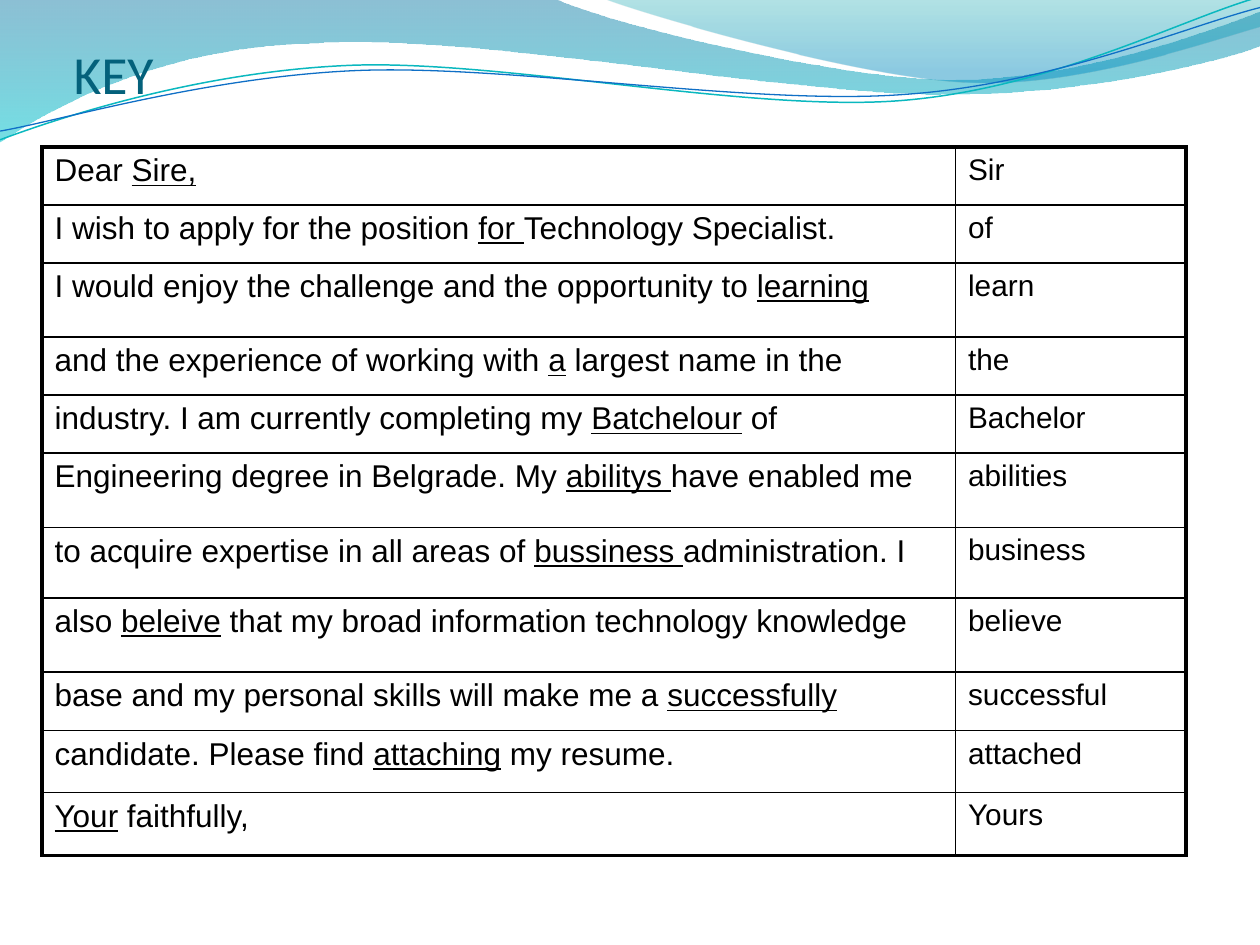
from lxml.etree import SubElement
from pptx import Presentation
from pptx.dml.color import RGBColor
from pptx.enum.text import MSO_ANCHOR, MSO_AUTO_SIZE, PP_ALIGN
from pptx.oxml.ns import qn
from pptx.util import Pt

COLORS = {
    "title": "04617B", "text": "000000", "border": "000000",
    "deep": "0074A1", "aqua": "00C6CF", "teal": "00A1A9", "sky": "008BBF",
    "teal line": "0AB8BF", "blue line": "0F6FC6",
}
THIN, THICK = 1, 2.25

WIDE_WAVE = [
    (0, 0), (317, -0.7), (342.7, 12.2, 478.1, 45.4, 545.8, 45.4),
    (614.2, 45.4, 689.8, 18.7, 720, 6.5), (720.7, 25.9),
    (707.8, 31.7, 626.4, 54.7, 537.1, 54), (447.8, 54, 275, 20.2, 185, 24.5),
    (92.9, 25.9, 33.1, 59.8, -0.7, 81.4), (0, 0),
]
RIGHT_WAVE = [
    (344.9, -0.7), (366.5, 7.9, 491, 44.6, 553.7, 46.8),
    (616.3, 49.7, 691.9, 23, 720, 15.1), (720, 0), (344.9, -0.7),
]
TEAL_LINE = [
    (0, 79.9), (34.6, 67, 113.8, 41, 199.4, 37.4),
    (284.4, 33.8, 427, 64.1, 513.4, 57.6),
    (599.8, 51.1, 675.4, 10.8, 718.6, -1.4),
]
BLUE_LINE = [
    (0, 74.9), (33.8, 69.1, 118.1, 43.9, 203.8, 40.3),
    (290.2, 36.7, 429.8, 60.5, 516.2, 54),
    (601.9, 48.2, 677.5, 15.1, 720, 4.3),
]

COLUMN_WIDTHS = (522, 131.8)
LETTER = [
    (33.1, "Dear ", "Sire,", " ", "Sir"),
    (33.1, "I wish to apply for the position ", "for ", "Technology Specialist.", "of"),
    (42.5, "I would enjoy the challenge and the opportunity to ", "learning", " ", "learn"),
    (33.1, "and the experience of working with ", "a", " largest name in the", "the"),
    (33.1, "industry. I am currently completing my ", "Batchelour", " of", "Bachelor"),
    (42.5, "Engineering degree in Belgrade. My ", "abilitys ", "have enabled me", "abilities"),
    (40.3, "to acquire expertise in all areas of ", "bussiness ", "administration. I", "business"),
    (42.5, "also ", "beleive", " that my broad information technology knowledge", "believe"),
    (33.5, "base and my personal skills will make me a ", "successfully", "", "successful"),
    (35.3, "candidate. Please find ", "attaching", " my resume.", "attached"),
    (36, "", "Your", " faithfully,", "Yours"),
]


def color(name):
    return RGBColor.from_string(COLORS[name])


def add_run(para, text, font, size, color_name, underline=False):
    span = para.add_run()
    span.text = text
    span.font.name = font
    span.font.size = Pt(size)
    span.font.color.rgb = color(color_name)
    if underline:
        span.font.underline = True


def bend_segments(shape, segments):
    steps = iter(list(shape._element.iter(qn("a:lnTo"))))
    for segment in segments:
        step = next(steps)
        if len(segment) == 6:
            curve = step.getparent().makeelement(qn("a:cubicBezTo"))
            step.addprevious(curve)
            for corner in (step, next(steps), next(steps)):
                curve.append(corner[0])
                corner.getparent().remove(corner)


def add_outline(page, segments, close):
    points = [(Pt(segment[i]), Pt(segment[i + 1]))
              for segment in segments for i in range(0, len(segment), 2)]
    builder = page.shapes.build_freeform(*points[0])
    builder.add_line_segments(points[1:], close=close)
    shape = builder.convert_to_shape()
    bend_segments(shape, segments[1:])
    shape.shadow.inherit = False
    return shape


def add_wave(page, segments, stops):
    wave = add_outline(page, segments, True)
    wave.line.fill.background()
    wave.fill.gradient()
    wave.fill.gradient_angle = 270
    for stop, (position, name, opacity) in zip(wave.fill.gradient_stops, stops):
        stop.position = position
        stop.color.rgb = color(name)
    paints = wave.fill._xPr.iter(qn("a:srgbClr"))
    for paint, (position, name, opacity) in zip(paints, stops):
        SubElement(paint, qn("a:alpha"), val=str(opacity * 1000))


def add_wave_line(page, segments, name, width):
    line = add_outline(page, segments, False)
    line.fill.background()
    line.line.color.rgb = color(name)
    line.line.width = Pt(width)


def format_title(page, text):
    title = page.shapes.title
    title.left, title.top, title.width, title.height = Pt(42), Pt(24), Pt(641.5), Pt(36)
    frame = title.text_frame
    frame.auto_size = MSO_AUTO_SIZE.NONE
    frame.word_wrap = True
    frame.vertical_anchor = MSO_ANCHOR.BOTTOM
    frame.margin_left = frame.margin_right = frame.margin_bottom = 0
    frame.margin_top = Pt(3.6)
    para = frame.paragraphs[0]
    para.alignment = PP_ALIGN.LEFT
    add_run(para, text, "Calibri", 30.6, "title")
    page.shapes._spTree.append(title._element)


def format_cell(cell, borders):
    properties = cell._tc.get_or_add_tcPr()
    for side, width in zip("LRTB", borders):
        edge = SubElement(properties, qn(f"a:ln{side}"), w=str(Pt(width)))
        fill = SubElement(edge, qn("a:solidFill"))
        SubElement(fill, qn("a:srgbClr"), val=COLORS["border"])
    cell.fill.background()


def add_key_table(page):
    heights = [line[0] for line in LETTER]
    frame = page.shapes.add_table(len(LETTER), 2, Pt(24), Pt(84),
                                  Pt(sum(COLUMN_WIDTHS)), Pt(sum(heights)))
    table = frame.table
    table.first_row = table.horz_banding = False
    for column, width in zip(table.columns, COLUMN_WIDTHS):
        column.width = Pt(width)
    for index, (height, before, mistake, after, correction) in enumerate(LETTER):
        table.rows[index].height = Pt(height)
        top = THICK if index == 0 else THIN
        bottom = THICK if index == len(LETTER) - 1 else THIN
        sentence, answer = table.cell(index, 0), table.cell(index, 1)
        format_cell(sentence, (THICK, THIN, top, bottom))
        format_cell(answer, (THIN, THICK, top, bottom))
        para = sentence.text_frame.paragraphs[0]
        for text, underline in ((before, False), (mistake, True), (after, False)):
            if text:
                add_run(para, text, "Arial", 18, "text", underline)
        add_run(answer.text_frame.paragraphs[0], correction, "Arial", 17, "text")


def main():
    deck = Presentation()
    deck.slide_width, deck.slide_height = Pt(720), Pt(540)
    page = deck.slides.add_slide(deck.slide_layouts[5])
    add_wave(page, WIDE_WAVE, [(0, "deep", 45), (1, "aqua", 55)])
    add_wave(page, RIGHT_WAVE, [(0, "teal", 30), (0.8, "sky", 45)])
    add_wave_line(page, TEAL_LINE, "teal line", 0.85)
    add_wave_line(page, BLUE_LINE, "blue line", 0.75)
    format_title(page, "KEY")
    add_key_table(page)
    deck.save("out.pptx")


if __name__ == "__main__":
    main()
